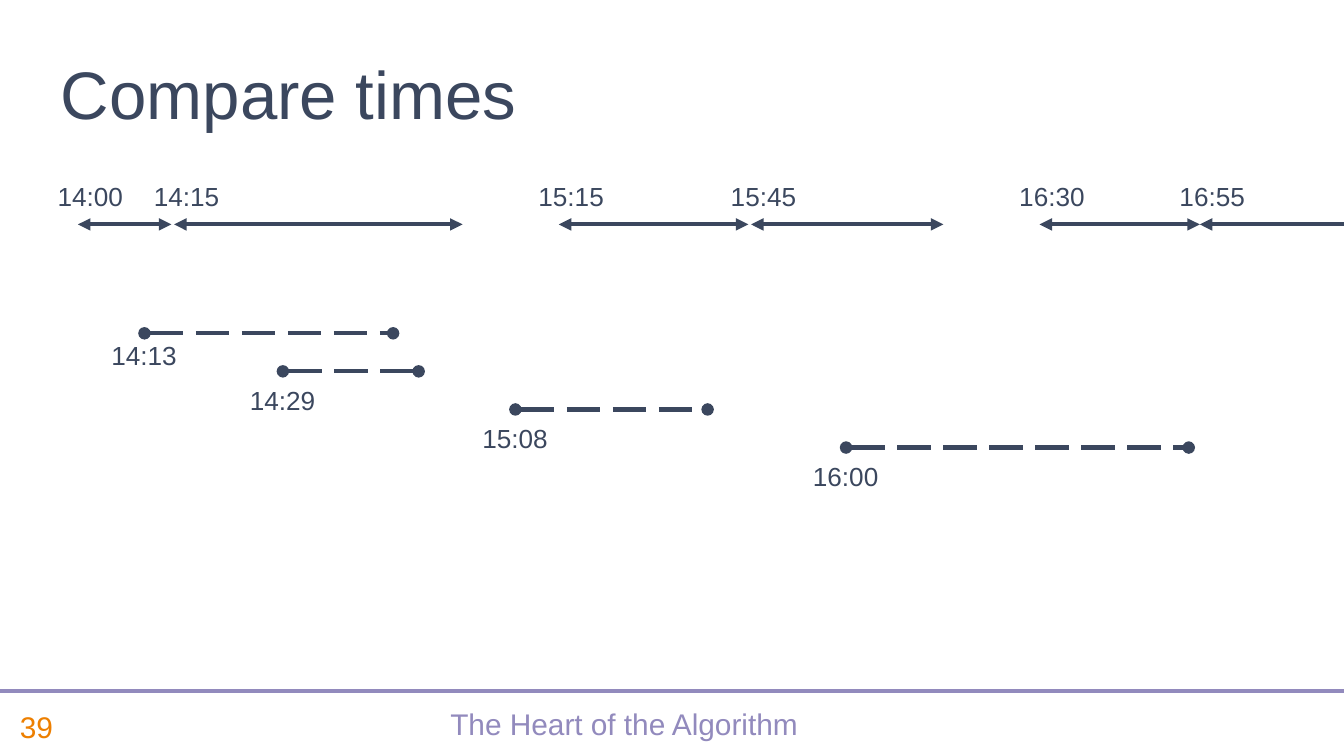
from collections import namedtuple

from lxml.etree import SubElement
from pptx import Presentation
from pptx.dml.color import RGBColor
from pptx.enum.dml import MSO_LINE
from pptx.enum.shapes import MSO_CONNECTOR
from pptx.enum.text import MSO_ANCHOR, MSO_AUTO_SIZE, PP_ALIGN
from pptx.oxml.ns import qn
from pptx.util import Inches, Pt

COLORS = {"ink": "3B475E", "lilac": "928ABD", "orange": "ED7F00"}
FONT = "Arial"
WIDTH = 10
HEIGHT = WIDTH * 9 / 16
CELL = WIDTH / 100  # square grid: 100 columns across the slide

# Box sides are counted in grid cells
Box = namedtuple("Box", "left top width height")
LABEL_WIDTH, LABEL_HEIGHT = 6.9, 3.4

# Time spans on the axis
SPANS = [("14:00", "14:15"), ("14:15", "15:00"), ("15:15", "15:45"),
         ("15:45", "16:15"), ("16:30", "16:55"), ("16:55", "17:20")]
SPAN_GAP = 0.2  # space left before a span that follows at once

# Start time, first and last column within the box, drop of the label
TRIPS = [("14:13", 0, 18.5, 0), ("14:29", 10.3, 20.4, 0.5),
         ("15:08", 27.6, 41.9, 0.45), ("16:00", 52.2, 77.7, 0.45)]


def cells(count):
    return Inches(count * CELL)


def minutes(clock):
    hour, minute = clock.split(":")
    return int(hour) * 60 + int(minute)


def add_text(slide, box, text, size, color, anchor=MSO_ANCHOR.TOP, wrap=True):
    frame = slide.shapes.add_textbox(*map(cells, box)).text_frame
    frame.word_wrap = wrap
    frame.auto_size = MSO_AUTO_SIZE.NONE if wrap else MSO_AUTO_SIZE.SHAPE_TO_FIT_TEXT
    frame.vertical_anchor = anchor
    frame.text = text
    paragraph = frame.paragraphs[0]
    font = paragraph.runs[0].font
    font.name, font.size = FONT, Pt(size)
    font.color.rgb = RGBColor.from_string(COLORS[color])
    return paragraph


def add_time(slide, left, top, clock):
    add_text(slide, Box(left, top, LABEL_WIDTH, LABEL_HEIGHT), clock, 14, "ink", wrap=False)


def add_rule(slide, start, end, y, color, ends=None, dash=None):
    rule = slide.shapes.add_connector(
        MSO_CONNECTOR.STRAIGHT, cells(start), cells(y), cells(end), cells(y))
    rule.line.color.rgb = RGBColor.from_string(COLORS[color])
    rule.line.width = Pt(2.25)
    if dash:
        rule.line.dash_style = dash
    if ends:
        line = rule.line._get_or_add_ln()
        for tag in ("a:headEnd", "a:tailEnd"):
            SubElement(line, qn(tag), type=ends)
    SubElement(rule._element.spPr, qn("a:effectLst"))


def build_footer(slide, box):
    add_rule(slide, box.left, box.left + box.width, box.top, "lilac")
    text_top, text_height = box.top + 0.5, box.height - 0.5
    lecture = add_text(slide, Box(box.left + 7.8, text_top, 77.3, text_height),
                       "The Heart of the Algorithm", 16, "lilac", MSO_ANCHOR.MIDDLE)
    lecture.alignment = PP_ALIGN.CENTER
    lecture.line_spacing = 0.8
    add_text(slide, Box(box.left + 0.5, text_top, 7.3, text_height),
             "39", 16, "orange", MSO_ANCHOR.MIDDLE)


def build_axis(slide, box):
    """Place each span on a time scale that fills the box."""
    first, last = minutes(SPANS[0][0]), minutes(SPANS[-1][1])
    per_minute = box.width / (last - first)
    for start, end in SPANS:
        left = box.left + (minutes(start) - first) * per_minute
        right = box.left + (minutes(end) - first) * per_minute
        gap = SPAN_GAP if end in ("14:15", "15:45") else 0
        add_rule(slide, left, right - gap, box.top + box.height, "ink", "triangle")
        add_time(slide, left - 2.5, box.top, start)


def build_trips(slide, box):
    """Step the dashed trips down the box, one row each."""
    row = box.height / (len(TRIPS) - 1)
    for index, (clock, start, end, drop) in enumerate(TRIPS):
        y = box.top + index * row
        add_rule(slide, box.left + start, box.left + end, y, "ink",
                 "oval", MSO_LINE.LONG_DASH)
        add_time(slide, box.left + start - 3.45, y + drop, clock)


def build_slide(slide):
    build_footer(slide, Box(0, 51.4, 100, 4.85))
    build_axis(slide, Box(5.8, 12.9, 95.4, 3.8))
    build_trips(slide, Box(10.75, 24.8, 77.7, 8.5))
    # Title
    add_text(slide, Box(3.55, 2.9, 76.6, 7.5), "Compare times", 36, "ink", MSO_ANCHOR.BOTTOM)


def main():
    deck = Presentation()
    deck.slide_width, deck.slide_height = Inches(WIDTH), Inches(HEIGHT)
    build_slide(deck.slides.add_slide(deck.slide_layouts[6]))
    deck.save("out.pptx")


if __name__ == "__main__":
    main()
